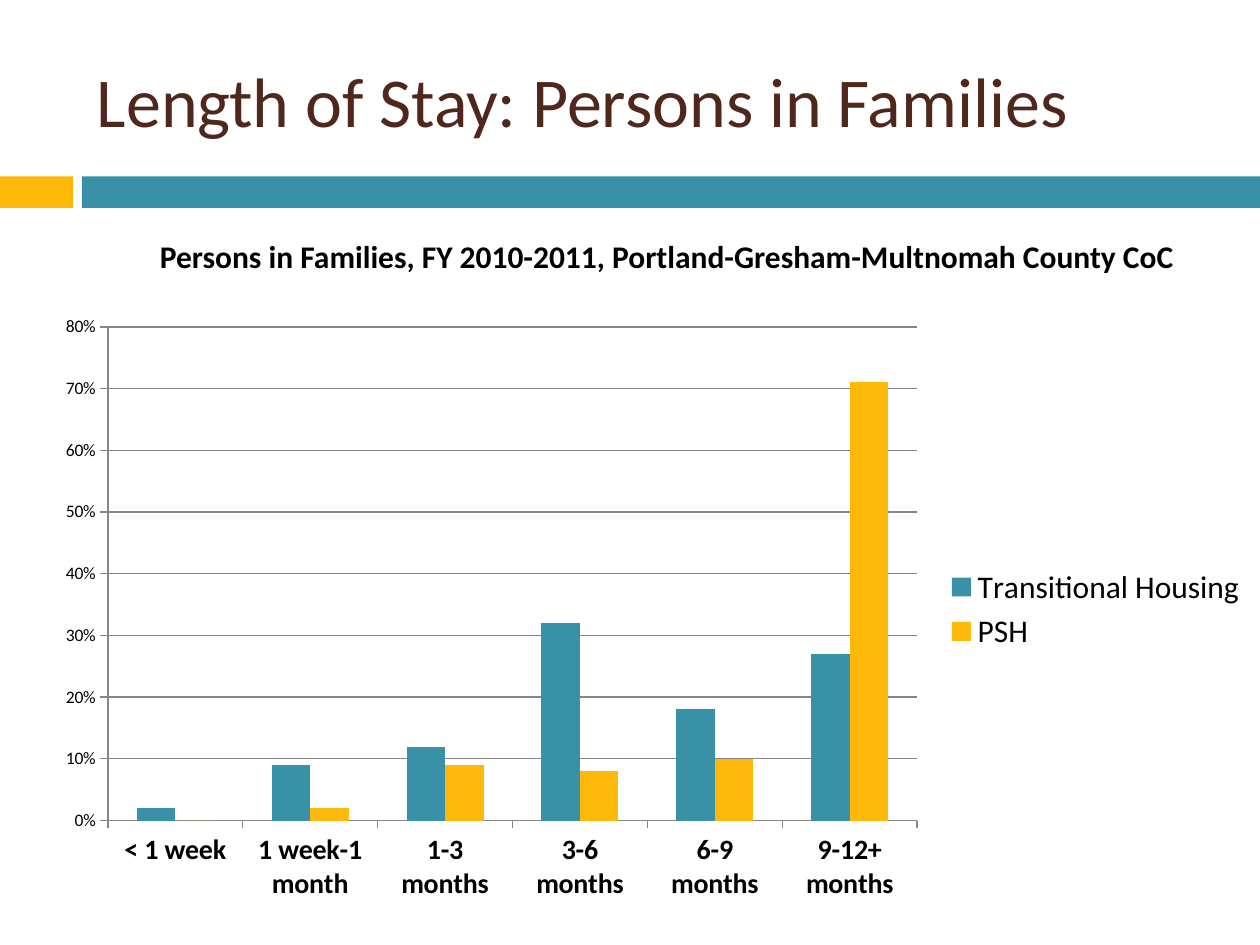
from pptx import Presentation
from pptx.chart.data import CategoryChartData
from pptx.dml.color import RGBColor
from pptx.enum.chart import XL_CHART_TYPE, XL_LEGEND_POSITION, XL_TICK_MARK
from pptx.enum.shapes import MSO_SHAPE
from pptx.enum.text import MSO_ANCHOR, MSO_AUTO_SIZE
from pptx.util import Inches, Pt

TEAL = RGBColor(0x38, 0x91, 0xA7)
GOLD = RGBColor(0xFE, 0xB8, 0x0A)
BROWN = RGBColor(0x4F, 0x27, 0x1C)
BLACK = RGBColor(0, 0, 0)
GRAY = RGBColor(0x86, 0x86, 0x86)
FONT = "Calibri"

STAYS = ["< 1 week", "1 week-1 month", "1-3 months",
         "3-6 months", "6-9 months", "9-12+ months"]
SERIES = [
    ("Transitional Housing", TEAL, [0.02, 0.09, 0.12, 0.32, 0.18, 0.27]),
    ("PSH", GOLD, [0, 0.02, 0.09, 0.08, 0.1, 0.71]),
]


def style_font(font, size, color=BLACK, bold=False):
    font.name = FONT
    font.size = Pt(size)
    font.bold = bold
    font.color.rgb = color


def add_text(slide, box, text, size, color, bold=False, wrap=True):
    frame = slide.shapes.add_textbox(*box).text_frame
    frame.word_wrap = wrap
    frame.auto_size = MSO_AUTO_SIZE.NONE if wrap else MSO_AUTO_SIZE.SHAPE_TO_FIT_TEXT
    frame.vertical_anchor = MSO_ANCHOR.MIDDLE if wrap else MSO_ANCHOR.TOP
    run = frame.paragraphs[0].add_run()
    run.text = text
    style_font(run.font, size, color, bold)


def add_band(slide, left, top, width, height):
    """Draw a short gold bar and a long teal bar with a gap between them."""
    split, gap = Inches(0.58), Inches(0.07)
    start = left + split + gap
    for x, wide, color in ((left, split, GOLD),
                           (start, left + width - start, TEAL)):
        bar = slide.shapes.add_shape(MSO_SHAPE.RECTANGLE, x, top, wide, height)
        bar.shadow.inherit = False
        bar.fill.solid()
        bar.fill.fore_color.rgb = color
        bar.line.fill.background()


def add_stays(slide, box):
    data = CategoryChartData(number_format="0%")
    data.categories = STAYS
    for name, _, values in SERIES:
        data.add_series(name, values)
    chart = slide.shapes.add_chart(
        XL_CHART_TYPE.COLUMN_CLUSTERED, *box, data).chart
    chart.has_title = False
    style_font(chart.font, 10)

    plot = chart.plots[0]
    plot.vary_by_categories = False
    plot.gap_width = 150
    plot.overlap = 0
    for series, (_, color, _) in zip(plot.series, SERIES):
        series.format.fill.solid()
        series.format.fill.fore_color.rgb = color

    months, share = chart.category_axis, chart.value_axis
    for axis in (months, share):
        axis.major_tick_mark = XL_TICK_MARK.OUTSIDE
        axis.minor_tick_mark = XL_TICK_MARK.NONE
        axis.format.line.color.rgb = GRAY
    style_font(months.tick_labels.font, 16, bold=True)
    share.minimum_scale, share.maximum_scale, share.major_unit = 0, 0.8, 0.1
    share.tick_labels.number_format = "0%"
    share.tick_labels.number_format_is_linked = False
    share.has_major_gridlines = True
    share.major_gridlines.format.line.color.rgb = GRAY

    chart.has_legend = True
    chart.legend.position = XL_LEGEND_POSITION.RIGHT
    chart.legend.include_in_layout = False
    style_font(chart.legend.font, 18)


def main():
    deck = Presentation()
    deck.slide_width, deck.slide_height = Inches(10), Inches(7.5)
    slide = deck.slides.add_slide(deck.slide_layouts[6])
    add_band(slide, 0, Inches(1.4), deck.slide_width, Inches(0.25))
    add_text(slide, (Inches(0.67), Inches(0.25), Inches(8.92), Inches(1.08)),
             "Length of Stay: Persons in Families", 40, BROWN)
    add_stays(slide, (Inches(0.33), Inches(2.42), Inches(9.67), Inches(4.83)))
    add_text(slide, (Inches(1.17), Inches(1.83), Inches(8.43), Inches(0.4)),
             "Persons in Families, FY 2010-2011, "
             "Portland-Gresham-Multnomah County CoC",
             18, BLACK, bold=True, wrap=False)
    deck.save("out.pptx")


if __name__ == "__main__":
    main()
